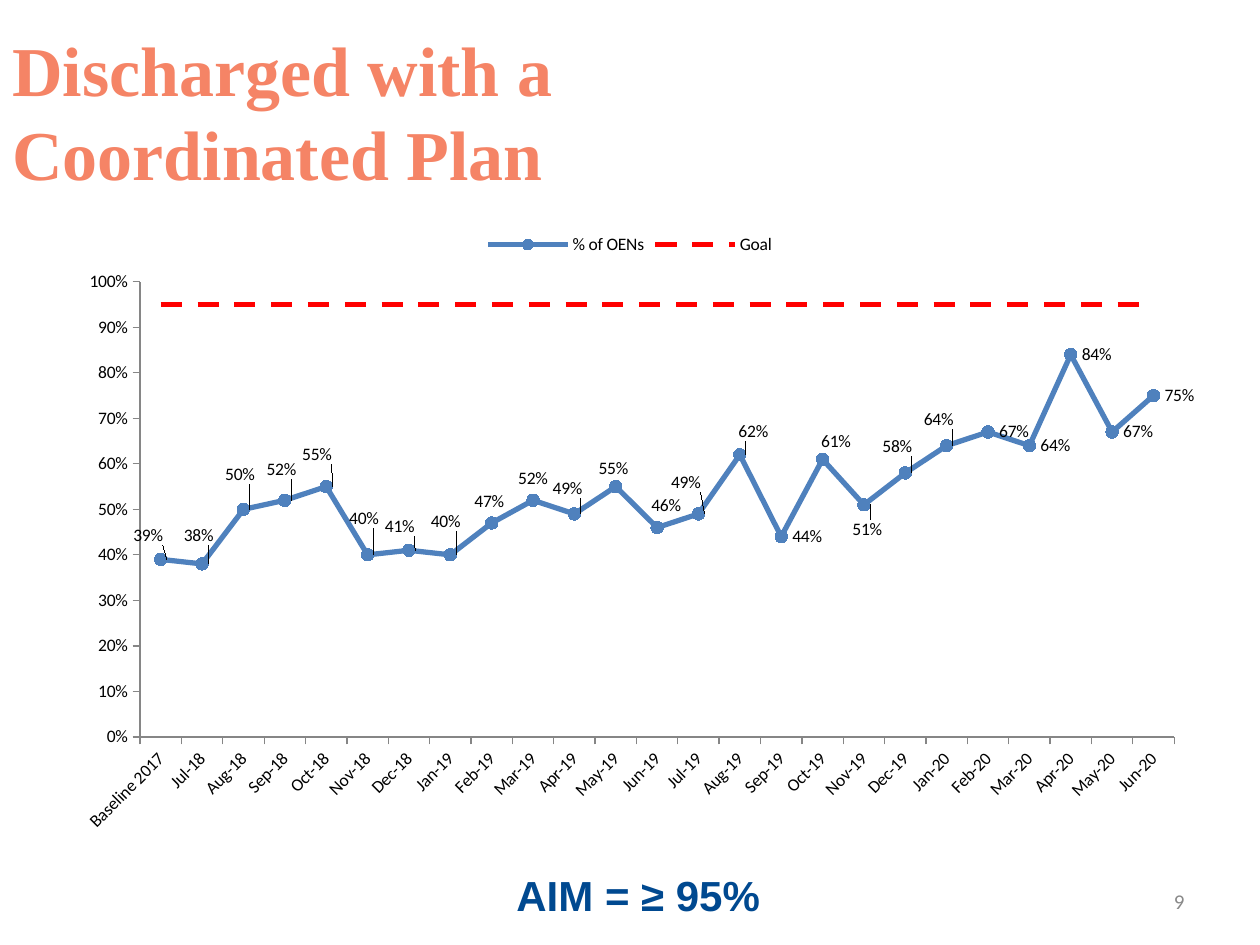
from pptx import Presentation
from pptx.chart.data import CategoryChartData
from pptx.dml.color import RGBColor
from pptx.enum.chart import (XL_CHART_TYPE, XL_LABEL_POSITION,
                             XL_LEGEND_POSITION, XL_MARKER_STYLE,
                             XL_TICK_MARK)
from pptx.enum.dml import MSO_LINE
from pptx.enum.text import MSO_ANCHOR, PP_ALIGN
from pptx.oxml import parse_xml
from pptx.oxml.ns import nsdecls
from pptx.util import Cm, Pt

MONTHS = "Jan Feb Mar Apr May Jun Jul Aug Sep Oct Nov Dec".split()
# July 2018 to June 2020, after the baseline year
CATS = ["Baseline 2017"] + [
    f"{MONTHS[n % 12]}-{18 + n // 12}" for n in range(6, 30)]
RATES = [39, 38, 50, 52, 55, 40, 41, 40, 47, 52, 49, 55, 46,
         49, 62, 44, 61, 51, 58, 64, 67, 64, 84, 67, 75]
GOAL = 0.95
# Label shifts from the right-hand place, in percent of the chart
SHIFTS = {0: (-3.4, -3.8), 1: (-2.6, -4.6), 2: (-2.6, -5.6), 3: (-2.6, -5),
          4: (-3.1, -5.1), 5: (-2.6, -5.9), 6: (-3.1, -3.8), 7: (-2.7, -5.3),
          8: (-2.5, -3.5), 9: (-2.3, -3.5), 10: (-2.9, -4), 11: (-2.5, -2.9),
          12: (-1.5, -3.5), 13: (-3.4, -5), 14: (-1.1, -3.8),
          16: (-1.1, -2.9), 17: (-2, 4), 18: (-3, -4.3), 19: (-3, -4.2)}


def color(code):
    return RGBColor.from_string(code)


def add_text(slide, box, text, face, size, code, bold=False,
             align=PP_ALIGN.LEFT, anchor=MSO_ANCHOR.MIDDLE):
    frame = slide.shapes.add_textbox(*map(Cm, box)).text_frame
    frame.word_wrap = True
    frame.vertical_anchor = anchor
    para = frame.paragraphs[0]
    para.alignment = align
    run = para.add_run()
    run.text = text
    font = run.font
    font.name, font.size, font.bold = face, Pt(size), bold
    font.color.rgb = color(code)


def layout(x, y, size=None):
    """Manual layout: a shift, or an inner plot area when size is given."""
    area = modes = ""
    if size:
        area = '<c:w val="%s"/><c:h val="%s"/>' % size
        modes = ('<c:layoutTarget val="inner"/>'
                 '<c:xMode val="edge"/><c:yMode val="edge"/>')
    return parse_xml(
        f'<c:layout {nsdecls("c")}><c:manualLayout>{modes}'
        f'<c:x val="{x}"/><c:y val="{y}"/>{area}'
        '</c:manualLayout></c:layout>')


def style_line(series, code, width):
    series.smooth = False
    series.format.line.color.rgb = color(code)
    series.format.line.width = Pt(width)


def style_axis(axis):
    axis.has_major_gridlines = False
    axis.major_tick_mark = XL_TICK_MARK.OUTSIDE
    axis.minor_tick_mark = XL_TICK_MARK.NONE
    axis.format.line.color.rgb = color("868686")
    axis.tick_labels.font.size = Pt(10)


def add_labels(series):
    labels = series.data_labels
    labels.show_value = True
    labels.number_format = "0%"
    labels.number_format_is_linked = False
    labels.position = XL_LABEL_POSITION.RIGHT
    for num, (x, y) in SHIFTS.items():
        series.points[num].data_label.position = XL_LABEL_POSITION.RIGHT
        idx = series._element.xpath(f"c:dLbls/c:dLbl/c:idx[@val='{num}']")[0]
        idx.addnext(layout(round(x / 100, 3), round(y / 100, 3)))


def add_trend(slide):
    data = CategoryChartData(number_format="0%")
    data.categories = CATS
    data.add_series("% of OENs", [rate / 100 for rate in RATES])
    data.add_series("Goal", [GOAL] * len(CATS))
    chart = slide.shapes.add_chart(
        XL_CHART_TYPE.LINE_MARKERS, Cm(1.27), Cm(4.45), Cm(22.86), Cm(12.57),
        data).chart
    chart.has_title = False
    chart.font.name, chart.font.size = "Calibri", Pt(10)
    chart.font.color.rgb = color("000000")
    chart.has_legend = True
    chart.legend.position = XL_LEGEND_POSITION.TOP
    chart.legend.include_in_layout = False

    plot = chart.plots[0]
    plot.vary_by_categories = False
    rate, goal = plot.series
    style_line(rate, "4F81BD", 3)
    rate.marker.style, rate.marker.size = XL_MARKER_STYLE.CIRCLE, 7
    rate.marker.format.fill.solid()
    rate.marker.format.fill.fore_color.rgb = color("4F81BD")
    rate.marker.format.line.color.rgb = color("4F81BD")
    add_labels(rate)
    style_line(goal, "FF0000", 3)
    goal.format.line.dash_style = MSO_LINE.DASH
    goal.marker.style = XL_MARKER_STYLE.NONE

    style_axis(chart.category_axis)
    chart.category_axis._element.txPr.bodyPr.set("rot", "-2700000")
    axis = chart.value_axis
    style_axis(axis)
    axis.minimum_scale, axis.maximum_scale, axis.major_unit = 0, 1, 0.1
    axis.tick_labels.number_format = "0%"
    axis.tick_labels.number_format_is_linked = False

    area = chart._chartSpace.chart.plotArea
    for old in area.xpath("c:layout"):
        area.remove(old)
    area.insert(0, layout(0.068, 0.098, (0.912, 0.73)))


def main():
    deck = Presentation()
    deck.slide_width, deck.slide_height = Cm(25.4), Cm(19.05)
    slide = deck.slides.add_slide(deck.slide_layouts[6])
    add_text(slide, (18.21, 17.65, 5.92, 1.02), "9", "Calibri", 12, "898989",
             align=PP_ALIGN.RIGHT)
    add_text(slide, (0, 0.64, 16.71, 3.18),
             "Discharged with a Coordinated Plan", "Times New Roman", 40,
             "F58466", bold=True)
    add_text(slide, (10.16, 17.4, 6.25, 1.27), "AIM = ≥ 95%", "Arial", 24,
             "004990", bold=True, anchor=MSO_ANCHOR.TOP)
    add_trend(slide)
    deck.save("out.pptx")


if __name__ == "__main__":
    main()
